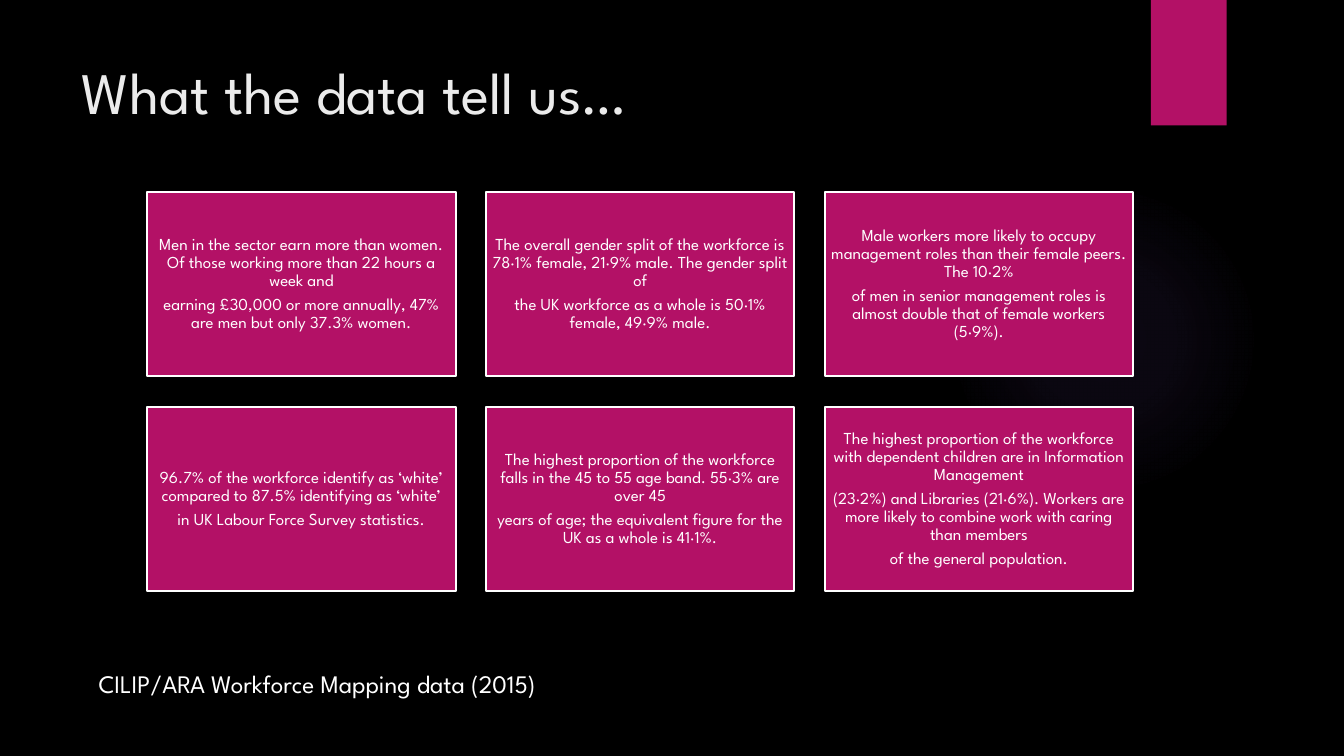
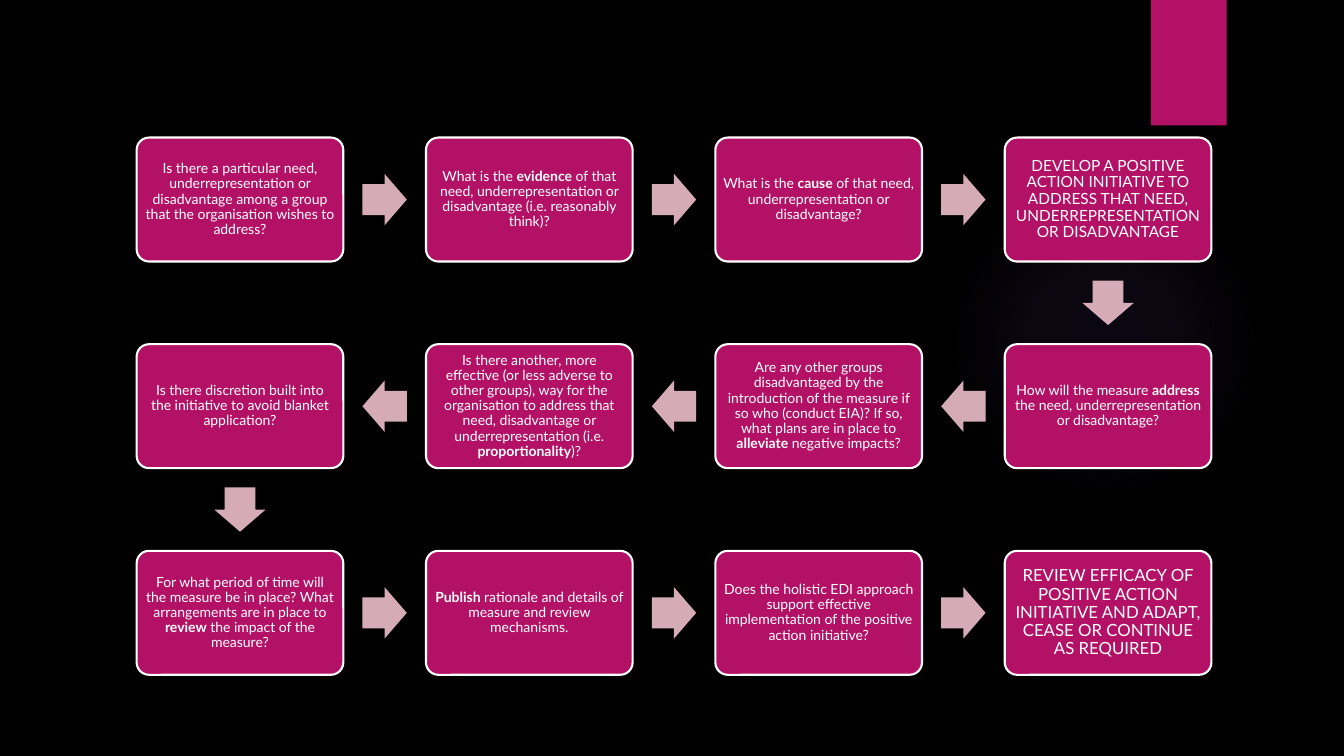
from math import atan2, degrees
from pptx import Presentation
from pptx.dml.color import RGBColor
from pptx.enum.shapes import MSO_SHAPE
from pptx.enum.text import MSO_ANCHOR, PP_ALIGN
from pptx.oxml import parse_xml
from pptx.oxml.ns import nsdecls, qn
from pptx.util import Inches, Pt

BLACK = RGBColor(0x00, 0x00, 0x00)
WHITE = RGBColor(0xFF, 0xFF, 0xFF)
PALE = RGBColor(0xEB, 0xEB, 0xEB)
PINK = RGBColor(0xB3, 0x11, 0x66)
ROSE = RGBColor(0xD6, 0xAB, 0xB8)
HEAD, BODY = "League Spartan", "Lato"


def block(slide, kind, x, y, w, h, fill=PINK, edge=None):
    """Add a flat preset shape centred on (x, y)."""
    shape = slide.shapes.add_shape(
        kind, Inches(x - w / 2), Inches(y - h / 2), Inches(w), Inches(h))
    shape.shadow.inherit = False
    shape.fill.solid()
    shape.fill.fore_color.rgb = fill
    if edge is None:
        shape.line.fill.background()
    else:
        shape.line.color.rgb = edge
        shape.line.width = Pt(1.5)
    return shape


def write(shape, text, size, font=HEAD, color=WHITE, boxed=False):
    """Fill a shape with text: one paragraph a line, **bold** between stars.

    Boxed text is centred both ways, with tight lines and narrow margins.
    """
    frame = shape.text_frame
    frame.word_wrap = True
    frame.vertical_anchor = MSO_ANCHOR.MIDDLE if boxed else MSO_ANCHOR.TOP
    if boxed:
        inset = Pt(size * 0.29)
        frame.margin_left = frame.margin_right = inset
        frame.margin_top = frame.margin_bottom = inset
    for i, line in enumerate(text.split("\n")):
        para = frame.add_paragraph() if i else frame.paragraphs[0]
        para.alignment = PP_ALIGN.CENTER if boxed else PP_ALIGN.LEFT
        if boxed:
            para.line_spacing = 0.9
            para.space_after = Pt(size * 0.35)
        for j, part in enumerate(line.split("**")):
            if part:
                run = para.add_run()
                run.text = part
                run.font.name = font
                run.font.size = Pt(size)
                run.font.bold = j % 2 == 1
                run.font.color.rgb = color


deck = Presentation()
deck.slide_width, deck.slide_height = Inches(13.33), Inches(7.5)
blank = deck.slide_layouts[6]
data = deck.slides.add_slide(blank)
flow = deck.slides.add_slide(blank)

# Shared look: black ground, soft glow and pink tab on the master
master = deck.slide_master
master.background.fill.solid()
master.background.fill.fore_color.rgb = BLACK

glow = block(data, MSO_SHAPE.OVAL, 10.95, 3.37, 3.08, 3.08)
stops = "".join(
    f'<a:gs pos="{at * 1000}"><a:srgbClr val="9B6BF2">'
    f'<a:alpha val="{alpha * 1000}"/></a:srgbClr></a:gs>'
    for at, alpha in [(0, 7), (36, 6), (69, 0), (100, 0)])
grad = parse_xml(
    f'<a:gradFill {nsdecls("a")}><a:gsLst>{stops}</a:gsLst><a:path path="circle">'
    '<a:fillToRect l="50000" t="50000" r="50000" b="50000"/></a:path></a:gradFill>')
props = glow.element.spPr
props.replace(props.find(qn("a:solidFill")), grad)

tab = block(data, MSO_SHAPE.RECTANGLE, 11.79, 0.62, 0.75, 1.25)
for num, shape in enumerate([glow, tab], 100):
    shape.element.nvSpPr.cNvPr.set("id", str(num))
    master.shapes.element.append(shape.element)

# Slide 1: facts in a grid of three columns
title = data.shapes.add_textbox(Inches(0.71), Inches(0.5), Inches(10.29), Inches(1.53))
write(title, "What the data tell us…", 42, color=PALE)

FACTS = [
    "Men in the sector earn more than women. Of those working more than 22 hours a week and\n"
    "earning £30,000 or more annually, 47% are men but only 37.3% women.",
    "The overall gender split of the workforce is 78·1% female, 21·9% male. The gender split of\n"
    "the UK workforce as a whole is 50·1% female, 49·9% male.",
    "Male workers more likely to occupy management roles than their female peers. The 10·2%\n"
    "of men in senior management roles is almost double that of female workers (5·9%).",
    "96.7% of the workforce identify as ‘white’ compared to 87.5% identifying as ‘white’\n"
    "in UK Labour Force Survey statistics.",
    "The highest proportion of the workforce falls in the 45 to 55 age band. 55·3% are over 45\n"
    "years of age; the equivalent figure for the UK as a whole is 41·1%.",
    "The highest proportion of the workforce with dependent children are in Information Management\n"
    "(23·2%) and Libraries (21·6%). Workers are more likely to combine work with caring than members\n"
    "of the general population.",
]
for i, fact in enumerate(FACTS):
    row, col = divmod(i, 3)
    card = block(data, MSO_SHAPE.RECTANGLE, 2.99 + 3.36 * col, 2.82 + 2.13 * row,
                 3.06, 1.83, edge=WHITE)
    write(card, fact, 12, boxed=True)

note = data.shapes.add_textbox(Inches(0.88), Inches(6.58), Inches(7.26), Inches(0.4))
write(note, "CILIP/ARA Workforce Mapping data (2015)", 18)

# Slide 2: steps that snake through rows of four, each with its text size
STEPS = [
    ("Is there a particular need, underrepresentation or disadvantage among a group "
     "that the organisation wishes to address?", 10),
    ("What is the **evidence** of that need, underrepresentation or disadvantage "
     "(i.e. reasonably think)?", 10),
    ("What is the **cause** of that need, underrepresentation or disadvantage?", 10),
    ("DEVELOP A POSITIVE ACTION INITIATIVE TO ADDRESS THAT NEED, "
     "UNDERREPRESENTATION OR DISADVANTAGE", 11),
    ("How will the measure **address** the need, underrepresentation or disadvantage?", 10),
    ("Are any other groups disadvantaged by the introduction of the measure if so who "
     "(conduct EIA)? If so, what plans are in place to **alleviate** negative impacts?", 10),
    ("Is there another, more effective (or less adverse to other groups), way for the "
     "organisation to address that need, disadvantage or underrepresentation "
     "(i.e. **proportionality**)?", 10),
    ("Is there discretion built into the initiative to avoid blanket application?", 10),
    ("For what period of time will the measure be in place? What arrangements are in place "
     "to **review** the impact of the measure?", 10),
    ("**Publish** rationale and details of measure and review mechanisms.", 10),
    ("Does the holistic EDI approach support effective implementation of the positive "
     "action initiative?", 10),
    ("REVIEW EFFICACY OF POSITIVE ACTION INITIATIVE AND ADAPT, CEASE OR CONTINUE "
     "AS REQUIRED", 12),
]
spots = []
for i in range(len(STEPS)):
    row, col = divmod(i, 4)
    if row % 2:
        col = 3 - col
    spots.append((2.38 + 2.87 * col, 1.98 + 2.05 * row))

for i, ((text, size), (x, y)) in enumerate(zip(STEPS, spots)):
    step = block(flow, MSO_SHAPE.ROUNDED_RECTANGLE, x, y, 2.05, 1.23, edge=WHITE)
    step.adjustments[0] = 0.1
    write(step, text, size, font=BODY, boxed=True)
    if i + 1 < len(spots):
        nx, ny = spots[i + 1]
        arrow = block(flow, MSO_SHAPE.RIGHT_ARROW, (x + nx) / 2, (y + ny) / 2,
                      0.44, 0.51, fill=ROSE)
        arrow.adjustments[0] = 0.6
        arrow.rotation = degrees(atan2(ny - y, nx - x))

deck.save("out.pptx")
